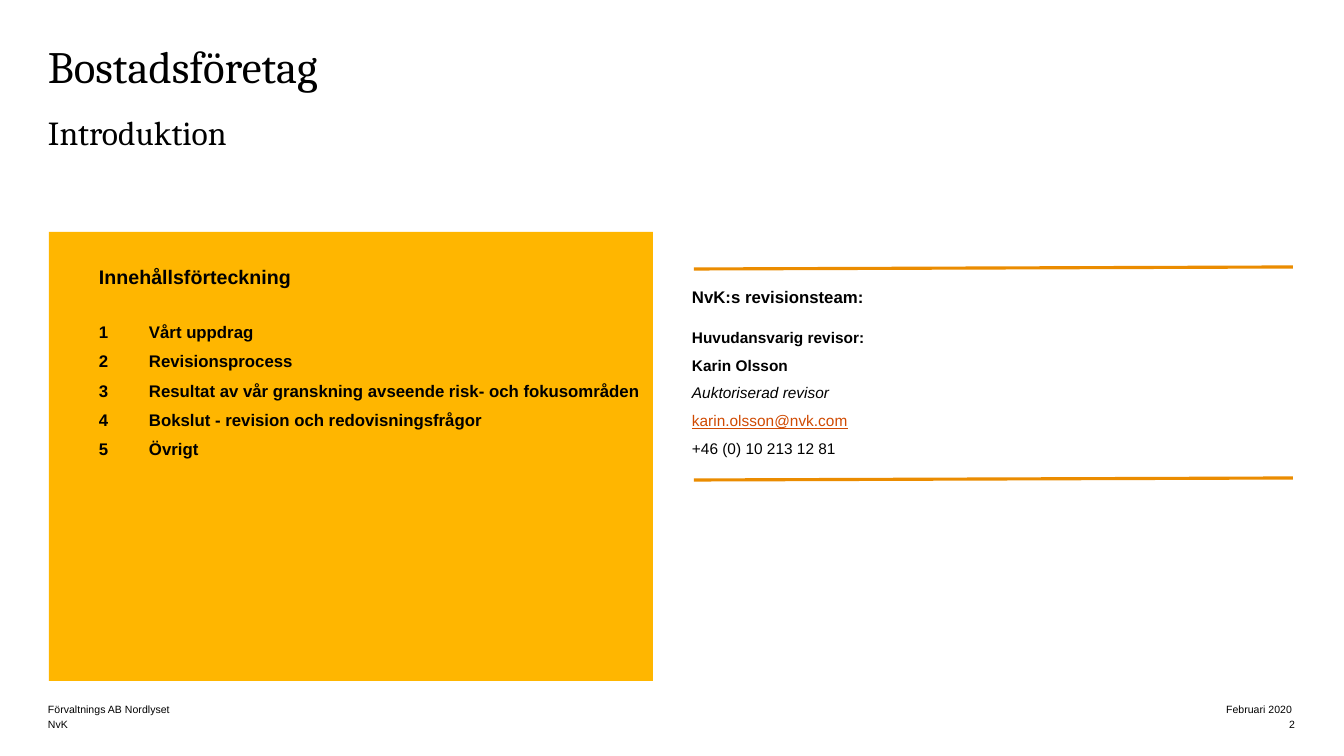
from pptx import Presentation
from pptx.dml.color import RGBColor
from pptx.enum.shapes import MSO_CONNECTOR as CONNECTOR, MSO_SHAPE as SHAPE
from pptx.enum.text import MSO_ANCHOR as ANCHOR, PP_ALIGN as ALIGN
from pptx.oxml.ns import qn
from pptx.util import Pt
from lxml.etree import SubElement

BLACK, YELLOW, ORANGE, LINK = "000000", "FFB600", "EB8C00", "D04A02"
BODY_FONT, TITLE_FONT = "Arial", "Cambria"

TITLE = [
    ("Bostadsföretag", dict(size=32)),
    ("Introduktion", dict(size=24, before=18)),
]
CONTENTS_HEADING = "Innehållsförteckning"
CONTENTS = [
    "Vårt uppdrag",
    "Revisionsprocess",
    "Resultat av vår granskning avseende risk- och fokusområden",
    "Bokslut - revision och redovisningsfrågor",
    "Övrigt",
]
TEAM = [
    ("NvK:s revisionsteam:", dict(size=12, bold=True)),
    ("Huvudansvarig revisor:", dict(bold=True, before=15)),
    ("Karin Olsson", dict(bold=True)),
    ("Auktoriserad revisor", dict(italic=True)),
    ("karin.olsson@nvk.com", dict(color=LINK, underline=True)),
    ("+46 (0) 10 213 12 81", dict()),
]
FOOTERS = [
    ("Förvaltnings AB Nordlyset", "Februari 2020 "),
    ("NvK", "2"),
]

LEFT, RIGHT, COLUMN = 48, 1295, 604
PANEL_TOP, PANEL_HEIGHT = 232, 449
TEAM_LEFT = RIGHT - COLUMN + 1
FOOTER_TOP, FOOTER_HEIGHT, FOOTER_WIDTH = 701, 15, 389
RULE_LEFT, RULE_RIGHT, RULE_RISE = 694, 1293, 2
RULE_STARTS = 269, 480
NUMBER_INDENT = 50
ROW_GAP = 6.6


def px(length):
    return round(length * 914400 / 100.8)


def rgb(color):
    return RGBColor.from_string(color)


def write(shape, lines, font=BODY_FONT, inset=0, align=ALIGN.LEFT,
          anchor=ANCHOR.TOP, spacing=None, indent=0):
    frame = shape.text_frame
    frame.word_wrap = True
    frame.vertical_anchor = anchor
    frame.margin_left = frame.margin_right = frame.margin_bottom = 0
    frame.margin_top = px(inset)
    for index, (text, style) in enumerate(lines):
        paragraph = frame.add_paragraph() if index else frame.paragraphs[0]
        paragraph.text = text
        paragraph.alignment = align
        paragraph.line_spacing = spacing
        paragraph.space_before = Pt(style.get("before", ROW_GAP) if index else 0)
        paragraph.font.name = font
        paragraph.font.size = Pt(style.get("size", 11))
        paragraph.font.bold = style.get("bold", False)
        paragraph.font.italic = style.get("italic", False)
        paragraph.font.underline = style.get("underline", False)
        paragraph.font.color.rgb = rgb(style.get("color", BLACK))
        if indent:
            hanging = indent if "\t" in text else 0
            properties = paragraph._p.get_or_add_pPr()
            properties.set("marL", str(px(indent + hanging)))
            properties.set("indent", str(px(-hanging)))


def add_text(slide, left, top, width, height, lines, **options):
    box = slide.shapes.add_textbox(px(left), px(top), px(width), px(height))
    write(box, lines, **options)


def add_contents(slide):
    panel = slide.shapes.add_shape(
        SHAPE.RECTANGLE, px(LEFT + 1), px(PANEL_TOP), px(COLUMN), px(PANEL_HEIGHT))
    panel.shadow.inherit = False
    panel.fill.solid()
    panel.fill.fore_color.rgb = rgb(YELLOW)
    panel.line.fill.background()
    lines = [(CONTENTS_HEADING, dict(size=14, bold=True))]
    for number, entry in enumerate(CONTENTS, 1):
        gap = 23.5 if number == 1 else ROW_GAP
        lines.append((f"{number}\t{entry}", dict(size=12, bold=True, before=gap)))
    write(panel, lines, inset=33, indent=NUMBER_INDENT)


def add_rule(slide, start):
    rule = slide.shapes.add_connector(
        CONNECTOR.STRAIGHT, px(RULE_LEFT), px(start), px(RULE_RIGHT), px(start - RULE_RISE))
    rule.line.color.rgb = rgb(ORANGE)
    rule.line.width = Pt(2.25)
    SubElement(rule._element.spPr, qn("a:effectLst"))


def main():
    presentation = Presentation()
    presentation.slide_width, presentation.slide_height = px(1344), px(756)
    slide = presentation.slides.add_slide(presentation.slide_layouts[6])

    add_text(slide, LEFT, 47, RIGHT - LEFT, 130, TITLE, font=TITLE_FONT, spacing=0.85)
    add_contents(slide)
    add_text(slide, TEAM_LEFT, PANEL_TOP, COLUMN, PANEL_HEIGHT, TEAM, inset=55)
    for start in RULE_STARTS:
        add_rule(slide, start)

    for row, (left_text, right_text) in enumerate(FOOTERS):
        top = FOOTER_TOP + row * FOOTER_HEIGHT
        add_text(slide, LEFT, top, COLUMN, FOOTER_HEIGHT,
                 [(left_text, dict(size=7.5))], anchor=ANCHOR.BOTTOM)
        add_text(slide, RIGHT - FOOTER_WIDTH, top, FOOTER_WIDTH, FOOTER_HEIGHT,
                 [(right_text, dict(size=7.5))], anchor=ANCHOR.BOTTOM, align=ALIGN.RIGHT)

    presentation.save("out.pptx")


if __name__ == "__main__":
    main()
